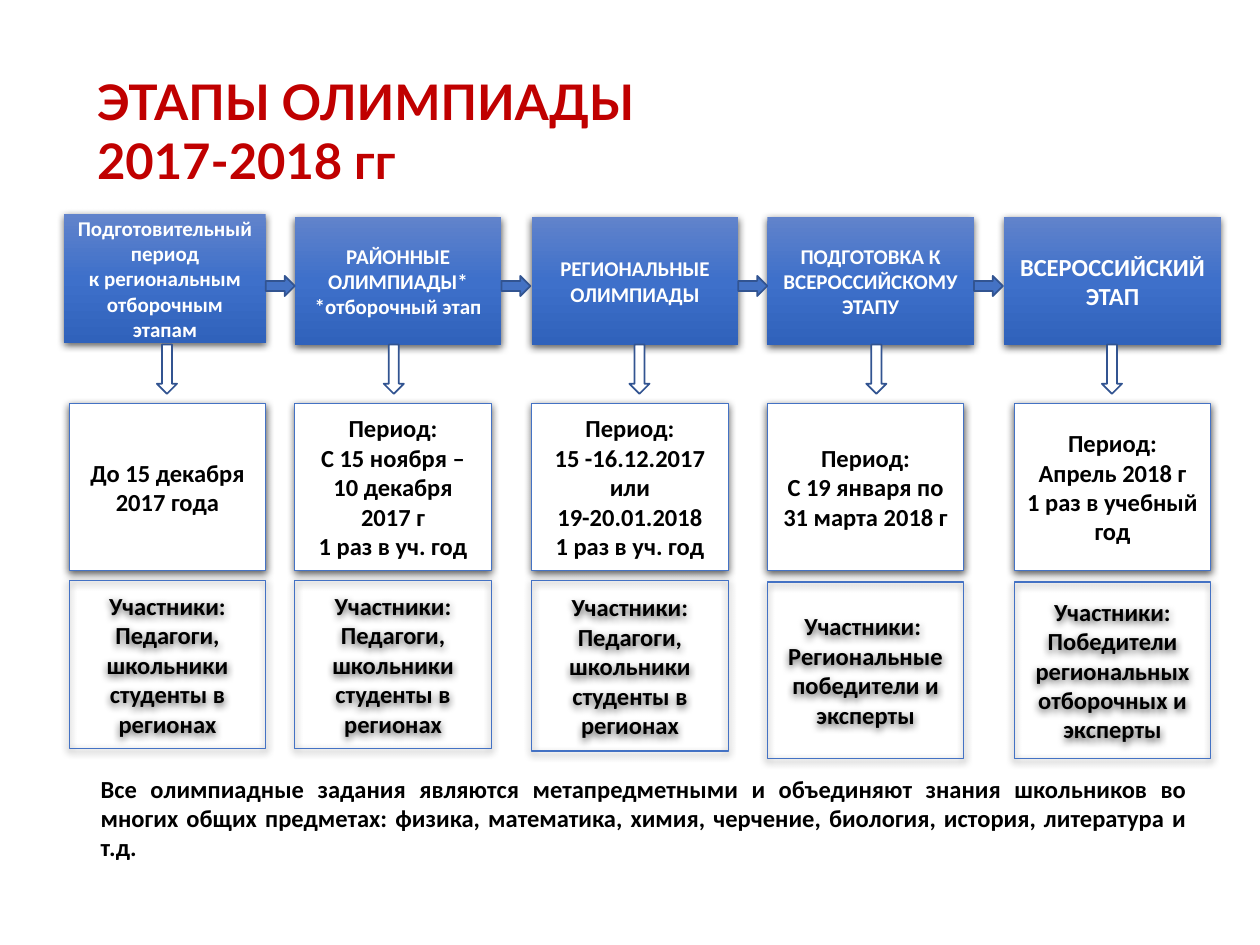
from copy import deepcopy
from dataclasses import dataclass

from lxml import etree
from pptx import Presentation
from pptx.dml.color import RGBColor
from pptx.enum.shapes import MSO_SHAPE
from pptx.enum.text import MSO_ANCHOR, MSO_AUTO_SIZE, PP_ALIGN
from pptx.oxml.ns import qn
from pptx.shapes.autoshape import Shape
from pptx.slide import Slide
from pptx.text.text import TextFrame
from pptx.util import Inches, Pt

RECTANGLE = MSO_SHAPE.RECTANGLE
RIGHT_ARROW = MSO_SHAPE.RIGHT_ARROW
TOP = MSO_ANCHOR.TOP
MIDDLE = MSO_ANCHOR.MIDDLE
NO_AUTO_SIZE = MSO_AUTO_SIZE.NONE
LEFT = PP_ALIGN.LEFT
CENTER = PP_ALIGN.CENTER
JUSTIFY = PP_ALIGN.JUSTIFY
TITLE_ONLY_LAYOUT = 5


@dataclass(frozen=True)
class Theme:
    title_font: str = "Lato"
    body_font: str = "Calibri"
    title_size: float = 28
    heading_size: float = 12
    body_size: float = 14
    red: str = "C00000"
    white: str = "FFFFFF"
    black: str = "000000"
    blue: str = "4472C4"
    dark_blue: str = "325491"
    gradient: tuple[str, ...] = ("6183CB", "3E70CA", "3062BB")


@dataclass(frozen=True)
class Box:
    left: float
    top: float
    width: float
    height: float


@dataclass(frozen=True)
class TextStyle:
    font: str
    size: float
    color: str
    alignment: PP_ALIGN


@dataclass(frozen=True)
class Stage:
    heading: tuple[str, ...]
    period: tuple[str, ...]
    participants: tuple[str, ...]
    heading_left: float
    card_left: float
    arrow_left: float
    heading_top: float = 1.72
    heading_width: float = 1.64
    heading_size: float = 12
    participants_top: float = 4.61
    participants_height: float = 1.33


THEME = Theme()
TITLE_STYLE = TextStyle(THEME.title_font, THEME.title_size, THEME.red, LEFT)
CARD_STYLE = TextStyle(THEME.body_font, THEME.body_size, THEME.black, CENTER)
NOTE_STYLE = TextStyle(THEME.body_font, THEME.body_size, THEME.black, JUSTIFY)

REGIONAL_PARTICIPANTS = ("Участники:", "Педагоги, школьники студенты в регионах")
STAGES = (
    Stage(
        ("Подготовительный период", "к региональным отборочным этапам"),
        ("До 15 декабря 2017 года",),
        REGIONAL_PARTICIPANTS,
        0.51, 0.55, 1.13, heading_top=1.7, heading_width=1.6,
    ),
    Stage(
        ("РАЙОННЫЕ ОЛИМПИАДЫ*", "*отборочный этап"),
        ("Период:", "С 15 ноября – 10 декабря 2017 г", "1 раз в уч. год"),
        REGIONAL_PARTICIPANTS,
        2.34, 2.34, 2.93,
    ),
    Stage(
        ("РЕГИОНАЛЬНЫЕ ОЛИМПИАДЫ",),
        ("Период:", "15 -16.12.2017 или", "19-20.01.2018", "1 раз в уч. год"),
        REGIONAL_PARTICIPANTS,
        4.22, 4.22, 4.88, participants_height=1.35,
    ),
    Stage(
        ("ПОДГОТОВКА К ВСЕРОССИЙСКОМУ ЭТАПУ",),
        ("Период:", "С 19 января по 31 марта 2018 г"),
        ("Участники: ", "Региональные победители и эксперты"),
        6.09, 6.09, 6.76, participants_top=4.62, participants_height=1.4,
    ),
    Stage(
        ("ВСЕРОССИЙСКИЙ ЭТАП",),
        ("Период:", "Апрель 2018 г", "1 раз в учебный год"),
        ("Участники: Победители региональных отборочных и эксперты",),
        7.97, 8.05, 8.63, heading_width=1.72, heading_size=THEME.body_size,
        participants_top=4.62, participants_height=1.4,
    ),
)


def rgb(color: str) -> RGBColor:
    return RGBColor.from_string(color)


def write_text(frame: TextFrame, lines: tuple[str, ...], style: TextStyle, anchor: MSO_ANCHOR) -> None:
    frame.word_wrap = True
    frame.auto_size = NO_AUTO_SIZE
    frame.vertical_anchor = anchor
    for index, line in enumerate(lines):
        paragraph = frame.add_paragraph() if index else frame.paragraphs[0]
        paragraph.text = line
        paragraph.alignment = style.alignment
        paragraph.font.name = style.font
        paragraph.font.size = Pt(style.size)
        paragraph.font.bold = True
        paragraph.font.color.rgb = rgb(style.color)


def add_preset(slide: Slide, preset: MSO_SHAPE, box: Box) -> Shape:
    shape = slide.shapes.add_shape(
        preset, Inches(box.left), Inches(box.top), Inches(box.width), Inches(box.height)
    )
    shape.shadow.inherit = False
    return shape


def add_shadow(shape: Shape) -> None:
    effects = shape._element.spPr.find(qn("a:effectLst"))
    shadow = etree.SubElement(
        effects, qn("a:outerShdw"), blurRad=str(Pt(4.5)), dist=str(Pt(1.5)),
        dir="5400000", algn="ctr", rotWithShape="0",
    )
    color = etree.SubElement(shadow, qn("a:srgbClr"), val=THEME.black)
    etree.SubElement(color, qn("a:alpha"), val="63000")


def fill_gradient(shape: Shape) -> None:
    shape.fill.gradient()
    shape.fill.gradient_angle = 270
    stop_list = shape._element.spPr.find(qn("a:gradFill")).find(qn("a:gsLst"))
    stop_list.insert(1, deepcopy(stop_list[0]))
    for index, (stop, color) in enumerate(zip(shape.fill.gradient_stops, THEME.gradient)):
        stop.position = index / 2
        stop.color.rgb = rgb(color)


def add_heading(slide: Slide, stage: Stage) -> None:
    box = Box(stage.heading_left, stage.heading_top, stage.heading_width, 1.02)
    shape = add_preset(slide, RECTANGLE, box)
    fill_gradient(shape)
    shape.line.fill.background()
    add_shadow(shape)
    style = TextStyle(THEME.body_font, stage.heading_size, THEME.white, CENTER)
    write_text(shape.text_frame, stage.heading, style, MIDDLE)


def add_card(slide: Slide, box: Box, lines: tuple[str, ...], filled: bool) -> None:
    shape = add_preset(slide, RECTANGLE, box)
    if filled:
        shape.fill.solid()
        shape.fill.fore_color.rgb = rgb(THEME.white)
    else:
        shape.fill.background()
    shape.line.color.rgb = rgb(THEME.blue)
    shape.line.width = Pt(0.75)
    add_shadow(shape)
    write_text(shape.text_frame, lines, CARD_STYLE, MIDDLE)


def add_arrow(slide: Slide, box: Box, color: str, rotation: float = 0) -> None:
    shape = add_preset(slide, RIGHT_ARROW, box)
    shape.rotation = rotation
    shape.fill.solid()
    shape.fill.fore_color.rgb = rgb(color)
    shape.line.color.rgb = rgb(THEME.dark_blue)
    shape.line.width = Pt(1)


def add_stage(slide: Slide, stage: Stage) -> None:
    add_heading(slide, stage)
    add_arrow(slide, Box(stage.arrow_left, 2.85, 0.39, 0.16), THEME.white, rotation=90)
    add_card(slide, Box(stage.card_left, 3.2, 1.56, 1.33), stage.period, True)
    participants_box = Box(stage.card_left, stage.participants_top, 1.56, stage.participants_height)
    add_card(slide, participants_box, stage.participants, False)


def main() -> None:
    presentation = Presentation()
    presentation.slide_width = Inches(10)
    presentation.slide_height = Inches(7.5)
    slide = presentation.slides.add_slide(presentation.slide_layouts[TITLE_ONLY_LAYOUT])
    title = slide.shapes.title
    title.left, title.top = Inches(0.67), Inches(0.52)
    title.width, title.height = Inches(5.11), Inches(1.04)
    write_text(title.text_frame, ("ЭТАПЫ ОЛИМПИАДЫ 2017-2018 гг",), TITLE_STYLE, TOP)
    for stage in STAGES:
        add_stage(slide, stage)
    for stage in STAGES[:-1]:
        arrow_left = stage.heading_left + stage.heading_width
        add_arrow(slide, Box(arrow_left, 2.19, 0.23, 0.16), THEME.blue)
    note = slide.shapes.add_textbox(Inches(0.7), Inches(6.09), Inches(8.82), Inches(0.81))
    note_text = (
        "Все олимпиадные задания являются метапредметными и объединяют знания школьников "
        "во многих общих предметах: физика, математика, химия, черчение, биология, "
        "история, литература и т.д."
    )
    write_text(note.text_frame, (note_text,), NOTE_STYLE, TOP)
    presentation.save("out.pptx")


if __name__ == "__main__":
    main()
